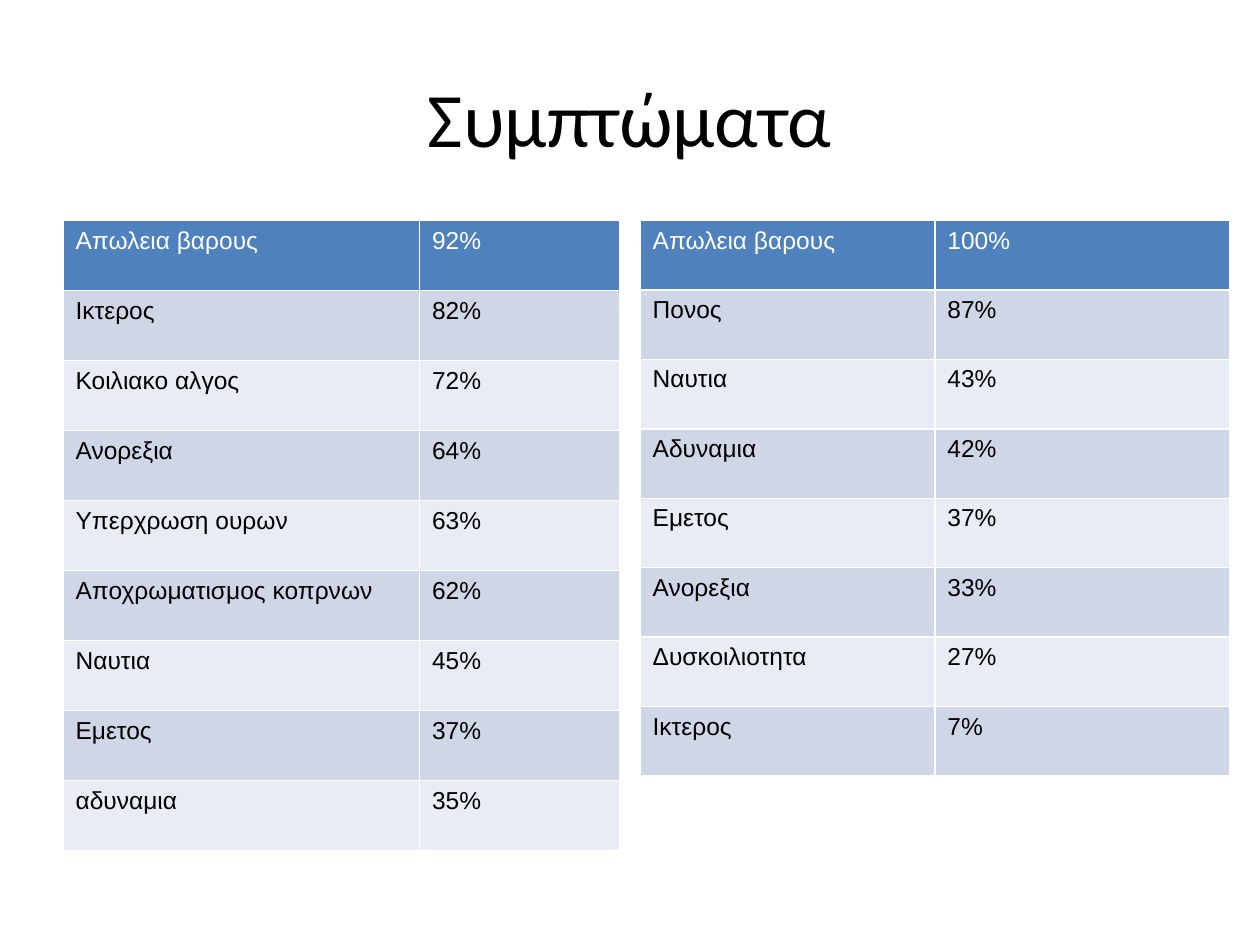
from pptx import Presentation
from pptx.dml.color import RGBColor
from pptx.enum.text import MSO_ANCHOR, PP_ALIGN
from pptx.util import Inches, Pt

CENTER = PP_ALIGN.CENTER
MIDDLE = MSO_ANCHOR.MIDDLE

COLORS = {
    "title": "000000",
    "header": "4F81BD",
    "header_text": "FFFFFF",
    "odd_row": "CFD7E7",
    "even_row": "E8ECF4",
    "text": "000000",
}

TITLE_BOX = (0.5, 0.3, 9, 1.25)
LEFT_BOX = (0.5, 1.75, 4.42, 5)
RIGHT_BOX = (5.08, 1.75, 4.68, 4.41)

LEFT_SYMPTOMS = [
    ("Απωλεια βαρους", "92%"),
    ("Ικτερος", "82%"),
    ("Κοιλιακο αλγος", "72%"),
    ("Ανορεξια", "64%"),
    ("Υπερχρωση ουρων", "63%"),
    ("Αποχρωματισμος κοπρνων", "62%"),
    ("Ναυτια", "45%"),
    ("Εμετος", "37%"),
    ("αδυναμια", "35%"),
]
RIGHT_SYMPTOMS = [
    ("Απωλεια βαρους", "100%"),
    ("Πονος", "87%"),
    ("Ναυτια", "43%"),
    ("Αδυναμια", "42%"),
    ("Εμετος", "37%"),
    ("Ανορεξια", "33%"),
    ("Δυσκοιλιοτητα", "27%"),
    ("Ικτερος", "7%"),
]


def rgb(name):
    return RGBColor.from_string(COLORS[name])


def style_text(p, font, size, color):
    p.font.name = font
    p.font.size = Pt(size)
    p.font.color.rgb = rgb(color)


def add_title(s, box, text):
    tf = s.shapes.add_textbox(*map(Inches, box)).text_frame
    tf.word_wrap = True
    tf.vertical_anchor = MIDDLE
    tf.margin_top = tf.margin_bottom = Inches(0.1)
    p = tf.paragraphs[0]
    p.text = text
    p.alignment = CENTER
    style_text(p, "Calibri", 44, "title")


def row_color(index):
    if index == 0:
        return "header"
    return "odd_row" if index % 2 else "even_row"


def add_symptom_table(s, box, symptoms, name_share):
    left, top, width, height = map(Inches, box)
    table = s.shapes.add_table(len(symptoms), 2, left, top, width, height).table
    for column, share in zip(table.columns, (name_share, 1 - name_share)):
        column.width = int(width * share)
    for i, row in enumerate(symptoms):
        for j, text in enumerate(row):
            cell = table.cell(i, j)
            cell.fill.solid()
            cell.fill.fore_color.rgb = rgb(row_color(i))
            p = cell.text_frame.paragraphs[0]
            p.text = text
            style_text(p, "Arial", 14, "text" if i else "header_text")


def main():
    prs = Presentation()
    prs.slide_width, prs.slide_height = Inches(10), Inches(7.5)
    s = prs.slides.add_slide(prs.slide_layouts[6])
    add_title(s, TITLE_BOX, "Συμπτώματα")
    add_symptom_table(s, LEFT_BOX, LEFT_SYMPTOMS, 0.64)
    add_symptom_table(s, RIGHT_BOX, RIGHT_SYMPTOMS, 0.5)
    prs.save("out.pptx")


if __name__ == "__main__":
    main()
